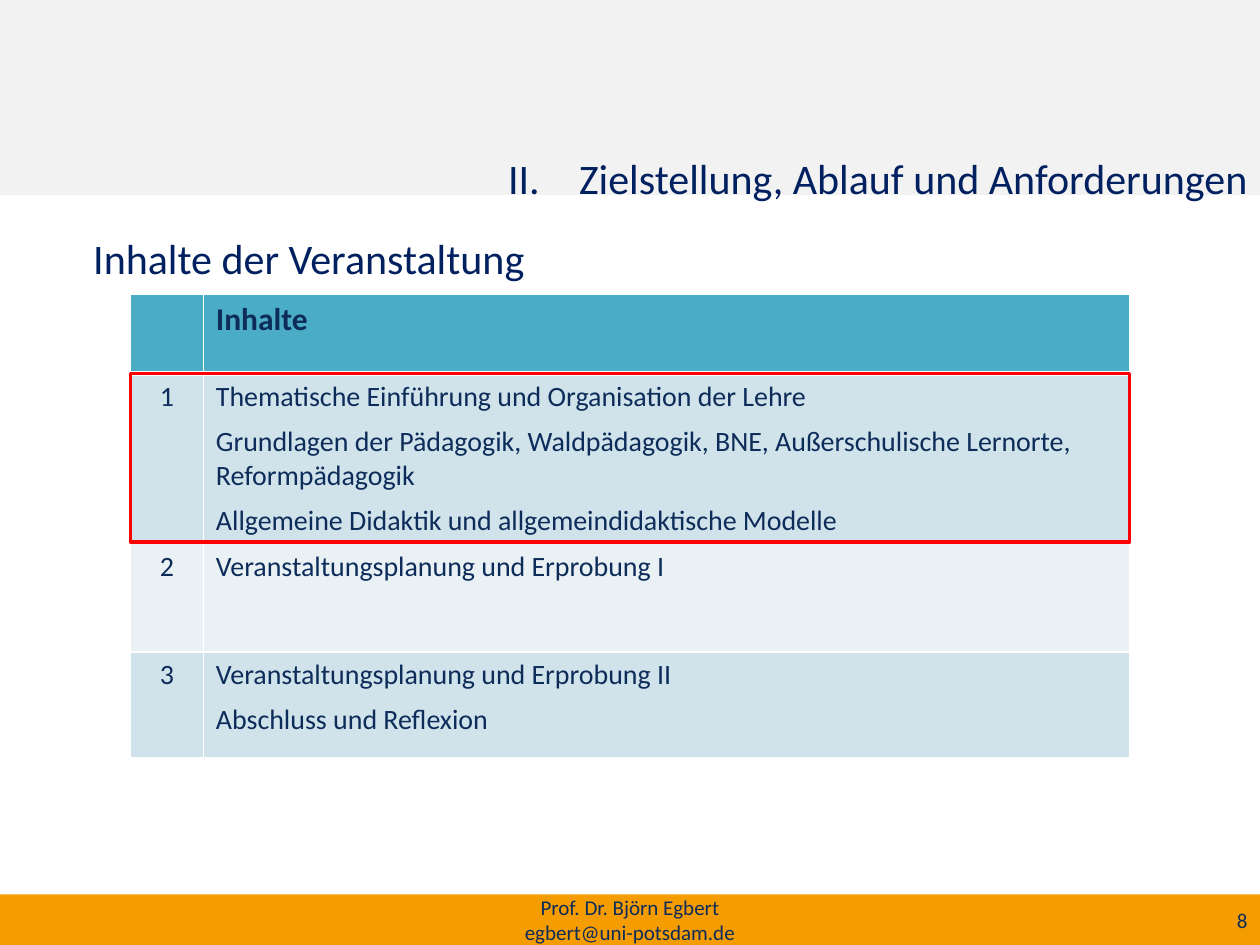
from dataclasses import dataclass

from lxml import etree
from pptx import Presentation
from pptx import util as u
from pptx.dml.color import RGBColor
from pptx.enum import shapes, text
from pptx.oxml.ns import qn


@dataclass(frozen=True)
class Theme:
    font: str = "Calibri"
    heading: str = "002060"
    ink: str = "0D2C5A"
    band: str = "F2F2F2"
    footer: str = "F59C00"
    table_head: str = "4BACC6"
    row_shades: tuple = ("D0E3EA", "E9F1F5")
    grid: str = "FFFFFF"
    mark: str = "FF0000"
    heading_size: int = 24
    table_head_size: int = 18
    table_size: int = 16
    footer_size: int = 12


class Deck:
    def __init__(self, theme, width, height):
        self.theme = theme
        self.prs = Presentation()
        self.prs.slide_width, self.prs.slide_height = u.Cm(width), u.Cm(height)
        self.slide = self.prs.slides.add_slide(self.prs.slide_layouts[6])

    def set_lines(self, frame, lines, size, color, align=text.PP_ALIGN.LEFT, bold=False, gap=0):
        """Fill a text frame, one paragraph a line, with gap points between them."""
        font_format = {"name": self.theme.font, "size": u.Pt(size), "bold": bold}
        for index, line in enumerate(lines):
            paragraph = frame.paragraphs[0] if index == 0 else frame.add_paragraph()
            paragraph.alignment = align
            if index < len(lines) - 1:
                paragraph.space_after = u.Pt(gap)
            run = paragraph.add_run()
            run.text = line
            for name, value in font_format.items():
                setattr(run.font, name, value)
            run.font.color.rgb = RGBColor.from_string(color)

    def rect(self, box, fill=None, line=None):
        shape = self.slide.shapes.add_shape(shapes.MSO_SHAPE.RECTANGLE, *map(u.Cm, box))
        shape.shadow.inherit = False
        if fill:
            shape.fill.solid()
            shape.fill.fore_color.rgb = RGBColor.from_string(fill)
        else:
            shape.fill.background()
        if line:
            shape.line.color.rgb = RGBColor.from_string(line)
            shape.line.width = u.Pt(2)
            etree.SubElement(shape.element.spPr.find(qn("a:ln")), qn("a:round"))
        else:
            shape.line.fill.background()

    def label(self, box, lines, size, color, anchor=text.MSO_ANCHOR.TOP, margin=0.13, **style):
        frame = self.slide.shapes.add_textbox(*map(u.Cm, box)).text_frame
        frame_format = {"word_wrap": True, "vertical_anchor": anchor,
                        "margin_top": u.Cm(margin), "margin_bottom": u.Cm(margin)}
        for name, value in frame_format.items():
            setattr(frame, name, value)
        self.set_lines(frame, lines, size, color, **style)
        return frame

    def number_roman(self, paragraph, start, indent):
        props = paragraph._p.get_or_add_pPr()
        props.set("marL", str(u.Cm(indent)))
        props.set("indent", str(-u.Cm(indent)))
        etree.SubElement(props, qn("a:buFont"), typeface=self.theme.font)
        etree.SubElement(props, qn("a:buAutoNum"), type="romanUcPeriod", startAt=str(start))

    def cell(self, cell, fill, borders):
        """Colour a cell and draw its borders, given in points by side."""
        cell.fill.solid()
        cell.fill.fore_color.rgb = RGBColor.from_string(fill)
        for position, (side, points) in enumerate(borders.items()):
            edge = etree.Element(qn(f"a:ln{side}"), w=str(u.Pt(points)))
            paint = etree.SubElement(edge, qn("a:solidFill"))
            etree.SubElement(paint, qn("a:srgbClr"), val=self.theme.grid)
            cell._tc.tcPr.insert(position, edge)

    def table(self, left, top, widths, heights, head, units):
        theme = self.theme
        box = map(u.Cm, (left, top, sum(widths), sum(heights)))
        table = self.slide.shapes.add_table(len(heights), len(widths), *box).table
        for column, width in zip(table.columns, widths):
            column.width = u.Cm(width)
        for row, height in zip(table.rows, heights):
            row.height = u.Cm(height)
        for r in range(len(heights)):
            fill = theme.row_shades[(r - 1) % 2] if r else theme.table_head
            borders = {"L": 1, "R": 1, "T": 3 if r == 1 else 1, "B": 3 if r == 0 else 1}
            for c in range(len(widths)):
                self.cell(table.cell(r, c), fill, borders)
        self.set_lines(table.cell(0, 1).text_frame, [head], theme.table_head_size,
                       theme.ink, bold=True)
        for number, topics in enumerate(units, start=1):
            self.set_lines(table.cell(number, 0).text_frame, [str(number)], theme.table_size,
                           theme.ink, align=text.PP_ALIGN.CENTER)
            self.set_lines(table.cell(number, 1).text_frame, topics, theme.table_size,
                           theme.ink, gap=6)


UNITS = [
    ["Thematische Einführung und Organisation der Lehre",
     "Grundlagen der Pädagogik, Waldpädagogik, BNE, Außerschulische Lernorte, Reformpädagogik",
     "Allgemeine Didaktik und allgemeindidaktische Modelle"],
    ["Veranstaltungsplanung und Erprobung I"],
    ["Veranstaltungsplanung und Erprobung II", "Abschluss und Reflexion"],
]


def main():
    theme = Theme()
    width, height = 25.4, 19.05
    deck = Deck(theme, width, height)

    footer_height = 1.02
    footer_top = height - footer_height
    deck.rect((0, 0, width, 3.93), fill=theme.band)
    deck.rect((0, footer_top, width, footer_height), fill=theme.footer)

    title = deck.label((3.5, 2.95, 21.9, 1.6), ["Zielstellung, Ablauf und Anforderungen"],
                       theme.heading_size, theme.heading, align=text.PP_ALIGN.RIGHT)
    deck.number_roman(title.paragraphs[0], start=2, indent=1.43)
    deck.label((1.63, 4.55, 22.15, 1.3), ["Inhalte der Veranstaltung"],
               theme.heading_size, theme.heading)

    footer_style = {"size": theme.footer_size, "color": theme.ink,
                    "anchor": text.MSO_ANCHOR.MIDDLE, "margin": 0}
    deck.label((19.3, footer_top, 6.1, footer_height), ["8"],
               align=text.PP_ALIGN.RIGHT, **footer_style)
    deck.label((8.4, footer_top, 8.6, footer_height),
               ["Prof. Dr. Björn Egbert", "egbert@uni-potsdam.de"],
               align=text.PP_ALIGN.CENTER, **footer_style)

    left, top = 2.63, 5.93
    widths, heights = (1.47, 18.67), (1.6, 3.42, 2.19, 2.14)
    deck.table(left, top, widths, heights, "Inhalte", UNITS)
    deck.rect((left, top + heights[0], sum(widths), 3.4), line=theme.mark)

    deck.prs.save("out.pptx")


if __name__ == "__main__":
    main()
